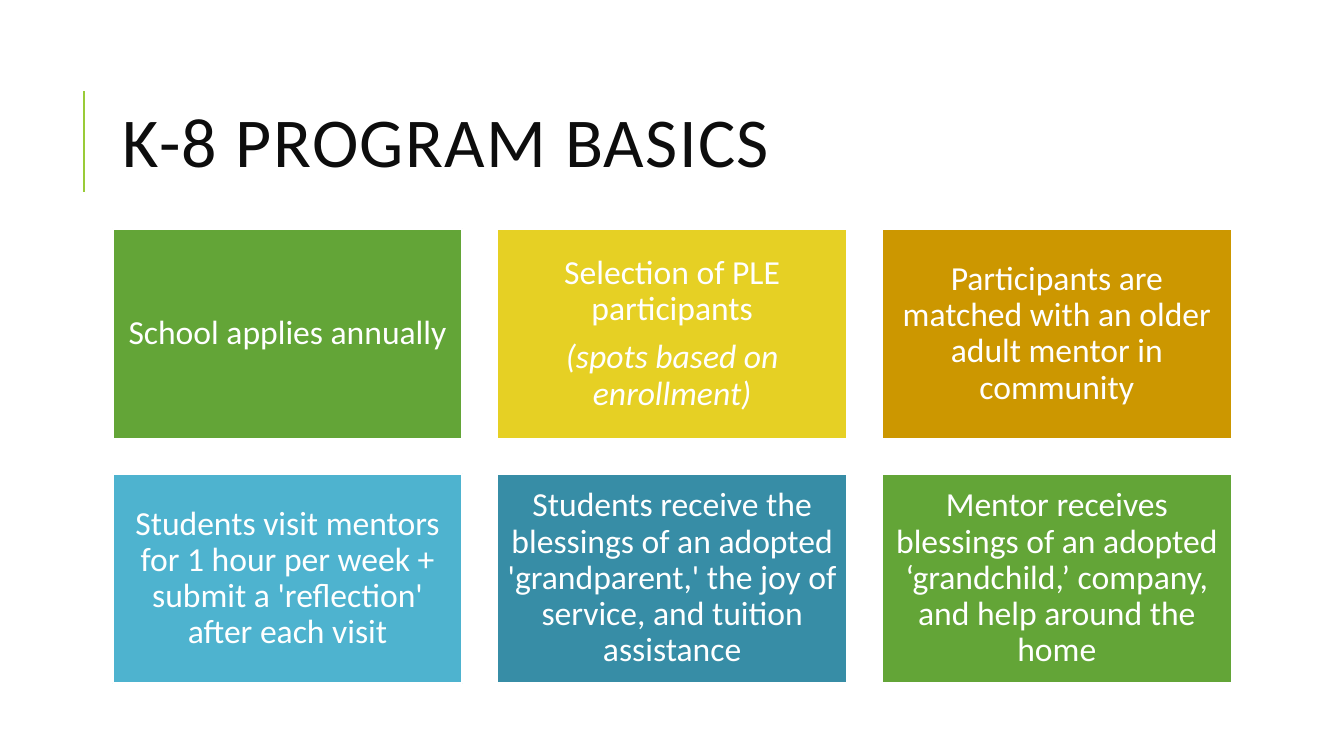
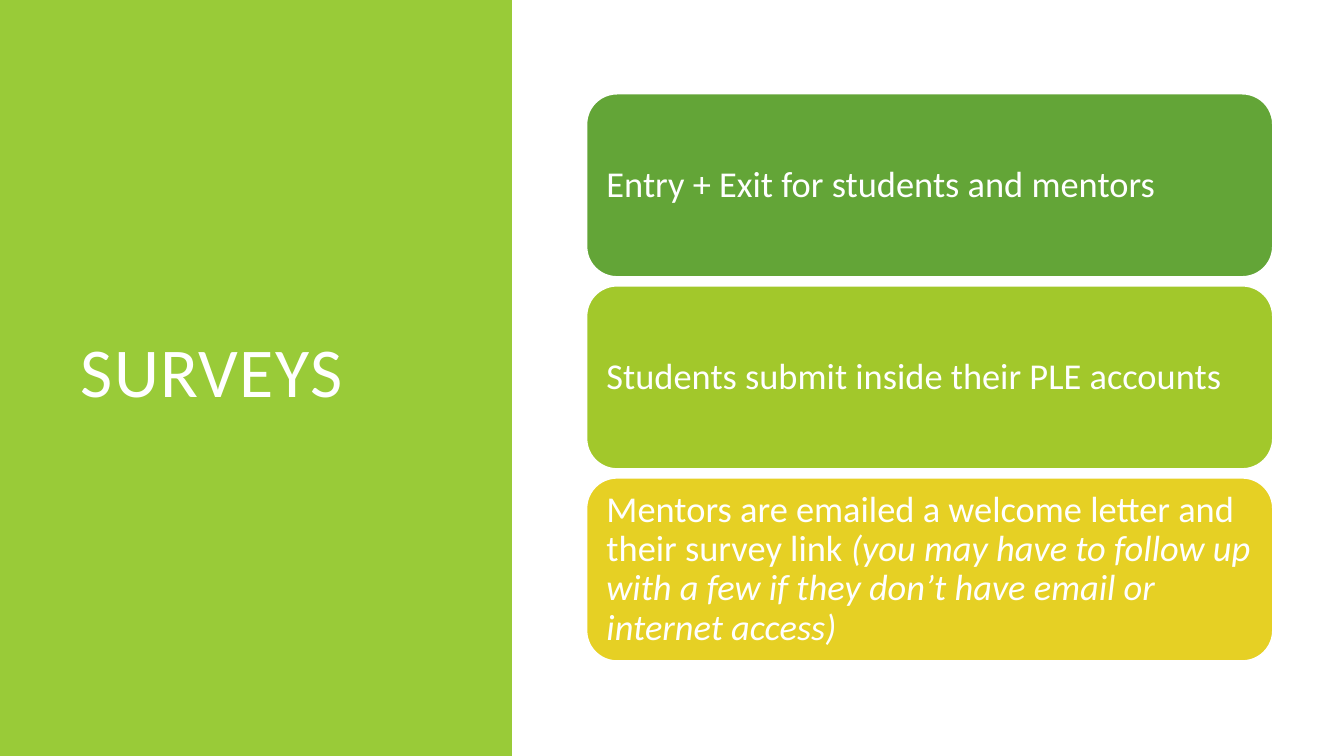
"""Build two slides on the K-8 program and its surveys."""
from dataclasses import dataclass

from lxml import etree
from pptx import Presentation
from pptx.dml.color import RGBColor
from pptx.enum.shapes import MSO_CONNECTOR, MSO_SHAPE
from pptx.enum.text import MSO_ANCHOR, PP_ALIGN
from pptx.oxml.ns import qn
from pptx.util import Cm, Pt

RECTANGLE, ROUNDED = MSO_SHAPE.RECTANGLE, MSO_SHAPE.ROUNDED_RECTANGLE
STRAIGHT = MSO_CONNECTOR.STRAIGHT
MIDDLE = MSO_ANCHOR.MIDDLE
LEFT, CENTER = PP_ALIGN.LEFT, PP_ALIGN.CENTER


@dataclass(frozen=True)
class Theme:
    """Hold the colours, font and type sizes of the presentation."""
    font: str = "Calibri"
    title_size: int = 50
    step_size: int = 24
    survey_size: int = 26
    ink: str = "0D0D0D"
    white: str = "FFFFFF"
    accent: str = "99CB38"
    green: str = "63A537"
    lime: str = "A2C82B"
    yellow: str = "E6D024"
    ochre: str = "CC9700"
    sky: str = "4EB3CF"
    teal: str = "378DA6"


THEME = Theme()
SLIDE_W, SLIDE_H = 33.87, 19.05

PROGRAM_STEPS = [
    (THEME.green, [[("School applies annually", False)]]),
    (THEME.yellow, [[("Selection of PLE participants", False)],
                    [("(spots based on enrollment)", True)]]),
    (THEME.ochre, [[("Participants are matched with an older adult mentor "
                     "in community", False)]]),
    (THEME.sky, [[("Students visit mentors for 1 hour per week + submit a "
                   "'reflection' after each visit", False)]]),
    (THEME.teal, [[("Students receive the blessings of an adopted "
                    "'grandparent,' the joy of service, and tuition "
                    "assistance", False)]]),
    (THEME.green, [[("Mentor receives blessings of an adopted ‘grandchild,’ "
                     "company, and help around the home", False)]]),
]
SURVEY_NOTES = [
    (THEME.green, [[("Entry + Exit for students and mentors", False)]]),
    (THEME.lime, [[("Students submit inside their PLE accounts", False)]]),
    (THEME.yellow, [[("Mentors are emailed a welcome letter and their survey "
                      "link ", False),
                     ("(you may have to follow up with a few if they don’t "
                      "have email or internet access)", True)]]),
]


def apply_format(target, values):
    """Set each named attribute of the target."""
    for name, value in values.items():
        setattr(target, name, value)


def write_text(frame, paragraphs, size, color, layout, inset=0.25):
    """Fill a text frame with paragraphs of (text, italic) runs."""
    margins = dict.fromkeys(
        ("margin_left", "margin_top", "margin_right", "margin_bottom"), Cm(inset))
    apply_format(frame, {"word_wrap": True, "vertical_anchor": MIDDLE, **margins})
    for index, pieces in enumerate(paragraphs):
        paragraph = frame.add_paragraph() if index else frame.paragraphs[0]
        apply_format(paragraph, layout)
        for text, italic in pieces:
            run = paragraph.add_run()
            run.text = text
            apply_format(run.font, {"name": THEME.font, "size": Pt(size),
                                    "italic": italic})
            run.font.color.rgb = RGBColor.from_string(color)


def add_panel(slide, box, color, kind=RECTANGLE, outline=None):
    """Add a filled shape, with an outline if a colour is given."""
    panel = slide.shapes.add_shape(kind, *map(Cm, box))
    panel.shadow.inherit = False
    panel.fill.solid()
    panel.fill.fore_color.rgb = RGBColor.from_string(color)
    if outline:
        panel.line.color.rgb = RGBColor.from_string(outline)
        panel.line.width = Pt(1.25)
    else:
        panel.line.fill.background()
    return panel


def add_title(slide, box, text, color):
    """Add a letter-spaced slide title in the given box."""
    title = slide.shapes.add_textbox(*map(Cm, box))
    layout = {"alignment": LEFT, "line_spacing": 0.8}
    write_text(title.text_frame, [[(text, False)]], THEME.title_size, color, layout)
    for run in title.text_frame.paragraphs[0].runs:
        run.font._element.set("spc", "100")


def add_title_rule(slide, x, top, height):
    """Add the upright accent line beside a title."""
    rule = slide.shapes.add_connector(
        STRAIGHT, Cm(x), Cm(top + height), Cm(x), Cm(top))
    rule.line.color.rgb = RGBColor.from_string(THEME.accent)
    rule.line.width = Pt(1.5)
    etree.SubElement(rule._element.spPr, qn("a:effectLst"))


def add_cards(slide, box, columns, gap, cards, kind, size, alignment, inset):
    """Lay out equal text cards in a grid that fills the box."""
    left, top, width, height = box
    rows = -(-len(cards) // columns)
    card_w = (width - gap * (columns - 1)) / columns
    card_h = (height - gap * (rows - 1)) / rows
    layout = {"alignment": alignment, "line_spacing": 0.9,
              "space_after": Pt(0.35 * size)}
    for index, (color, paragraphs) in enumerate(cards):
        row, column = divmod(index, columns)
        place = (left + column * (card_w + gap), top + row * (card_h + gap),
                 card_w, card_h)
        card = add_panel(slide, place, color, kind, THEME.white)
        write_text(card.text_frame, paragraphs, size, THEME.white, layout, inset)


def build_program_slide(slide):
    """Build the slide of program steps."""
    add_title_rule(slide, 2.11, 2.29, 2.54)
    add_title(slide, (2.84, 1.63, 27, 4.17), "K-8 PROGRAM BASICS", THEME.ink)
    add_cards(slide, (2.84, 5.77, 28.2, 11.45), 3, 0.88, PROGRAM_STEPS,
              RECTANGLE, THEME.step_size, CENTER, 0.25)


def build_survey_slide(slide):
    """Build the slide of survey notes beside a title band."""
    add_panel(slide, (0, 0, 12.9, SLIDE_H), THEME.accent)
    add_title(slide, (1.78, 1.78, 9.5, 15.47), "SURVEYS", THEME.white)
    add_cards(slide, (14.78, 2.36, 17.3, 14.3), 1, 0.22, SURVEY_NOTES,
              ROUNDED, THEME.survey_size, LEFT, 0.28)


def main():
    """Build and save the presentation."""
    deck = Presentation()
    apply_format(deck, {"slide_width": Cm(SLIDE_W), "slide_height": Cm(SLIDE_H)})
    for build in (build_program_slide, build_survey_slide):
        build(deck.slides.add_slide(deck.slide_layouts[6]))
    deck.save("out.pptx")


if __name__ == "__main__":
    main()
